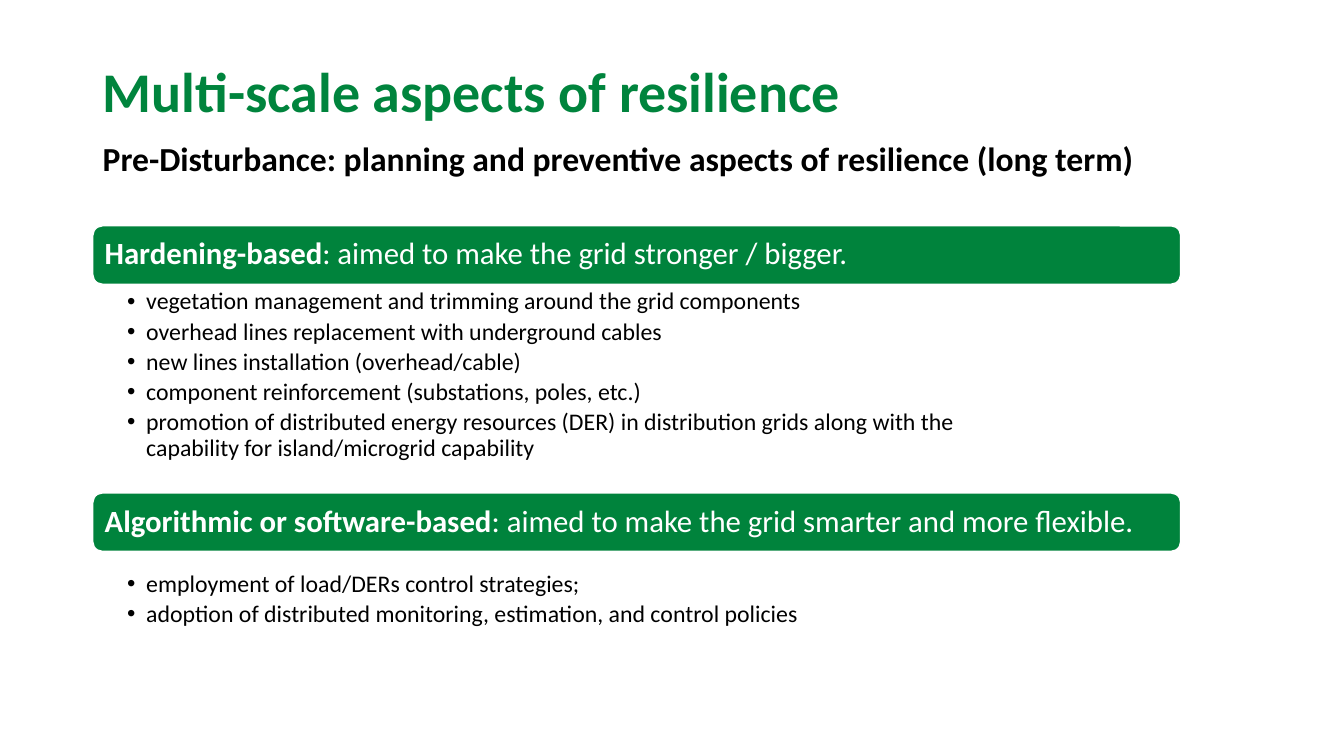
from lxml import etree
from pptx import Presentation
from pptx import util as u
from pptx.dml.color import RGBColor
from pptx.enum import shapes, text
from pptx.oxml.ns import qn

GREEN = "00833C"
TITLE_GREEN = "00843D"
WHITE = "FFFFFF"
BLACK = "000000"

LEFT = 0.92
WIDTH = 10.79
BANNER_HEIGHT = 0.58

SECTIONS = [
    (2.24, 0.02, 1.89, "Hardening-based", ": aimed to make the grid stronger / bigger.", [
        "vegetation management and trimming around the grid components",
        "overhead lines replacement with underground cables",
        "new lines installation (overhead/cable)",
        "component reinforcement (substations, poles, etc.)",
        "promotion of distributed energy resources (DER) in distribution grids along with the \n"
        "capability for island/microgrid capability",
    ]),
    (4.89, 0.17, 0.65, "Algorithmic or software-based",
     ": aimed to make the grid smarter and more flexible.", [
         "employment of load/DERs control strategies;",
         "adoption of distributed monitoring, estimation, and control policies",
     ]),
]


def color(value):
    return RGBColor.from_string(value)


def format_runs(paragraph, size, fill, bold=False):
    for run in paragraph.runs:
        run.font.name = "Calibri"
        run.font.size = u.Pt(size)
        run.font.bold = bold
        run.font.color.rgb = color(fill)


def place(shape, left, top, width, height):
    shape.left, shape.top = u.Inches(left), u.Inches(top)
    shape.width, shape.height = u.Inches(width), u.Inches(height)


def set_frame(frame, anchor, left=0.1, top=0.05, right=0.1, bottom=0.05):
    frame.word_wrap = True
    frame.auto_size = text.MSO_AUTO_SIZE.NONE
    frame.vertical_anchor = anchor
    frame.margin_left, frame.margin_right = u.Inches(left), u.Inches(right)
    frame.margin_top, frame.margin_bottom = u.Inches(top), u.Inches(bottom)


def add_heading(shape, wording, box, size, fill):
    place(shape, *box)
    frame = shape.text_frame
    set_frame(frame, text.MSO_ANCHOR.TOP)
    frame.text = wording
    paragraph = frame.paragraphs[0]
    paragraph.alignment = text.PP_ALIGN.LEFT
    format_runs(paragraph, size, fill, bold=True)


def add_banner(slide, left, top, width, height, label, aim):
    banner = slide.shapes.add_shape(
        shapes.MSO_SHAPE.ROUNDED_RECTANGLE, *map(u.Inches, (left, top, width, height)))
    banner.shadow.inherit = False
    banner.fill.solid()
    banner.fill.fore_color.rgb = color(GREEN)
    banner.line.color.rgb = color(WHITE)
    banner.line.width = u.Pt(1)
    set_frame(banner.text_frame, text.MSO_ANCHOR.MIDDLE, left=0.09, right=0.09)
    paragraph = banner.text_frame.paragraphs[0]
    paragraph.alignment = text.PP_ALIGN.LEFT
    paragraph.line_spacing = 0.9
    for wording in (label, aim):
        paragraph.add_run().text = wording
    format_runs(paragraph, 22, WHITE)
    paragraph.runs[0].font.bold = True


def add_bullets(slide, left, top, width, height, items):
    box = slide.shapes.add_textbox(*map(u.Inches, (left, top, width, height)))
    frame = box.text_frame
    set_frame(frame, text.MSO_ANCHOR.TOP, left=0.34, top=0.03, right=0.17, bottom=0.03)
    for index, item in enumerate(items):
        paragraph = frame.add_paragraph() if index else frame.paragraphs[0]
        paragraph.text = item
        properties = paragraph._p.get_or_add_pPr()
        properties.set("marL", str(u.Inches(0.19)))
        properties.set("indent", str(-u.Inches(0.19)))
        etree.SubElement(properties, qn("a:buFont")).set("typeface", "Arial")
        etree.SubElement(properties, qn("a:buChar")).set("char", "•")
        paragraph.line_spacing = 0.9
        paragraph.space_after = u.Pt(3.2)
        format_runs(paragraph, 17, BLACK)


def add_section(slide, left, top, width, gap, list_height, label, aim, items):
    add_banner(slide, left, top, width, BANNER_HEIGHT, label, aim)
    add_bullets(slide, left, top + BANNER_HEIGHT + gap, width, list_height, items)


def main():
    presentation = Presentation()
    presentation.slide_width = u.Inches(13.33)
    presentation.slide_height = u.Inches(7.5)
    slide = presentation.slides.add_slide(presentation.slide_layouts[5])
    add_heading(slide.shapes.title, "Multi-scale aspects of resilience",
                (LEFT, 0.51, 8.25, 0.73), 40, TITLE_GREEN)
    add_heading(slide.shapes.add_textbox(0, 0, 0, 0),
                "Pre-Disturbance: planning and preventive aspects of resilience (long term)",
                (LEFT, 1.32, 11.5, 0.73), 24, BLACK)
    for top, gap, list_height, label, aim, items in SECTIONS:
        add_section(slide, LEFT, top, WIDTH, gap, list_height, label, aim, items)
    presentation.save("out.pptx")


if __name__ == "__main__":
    main()
